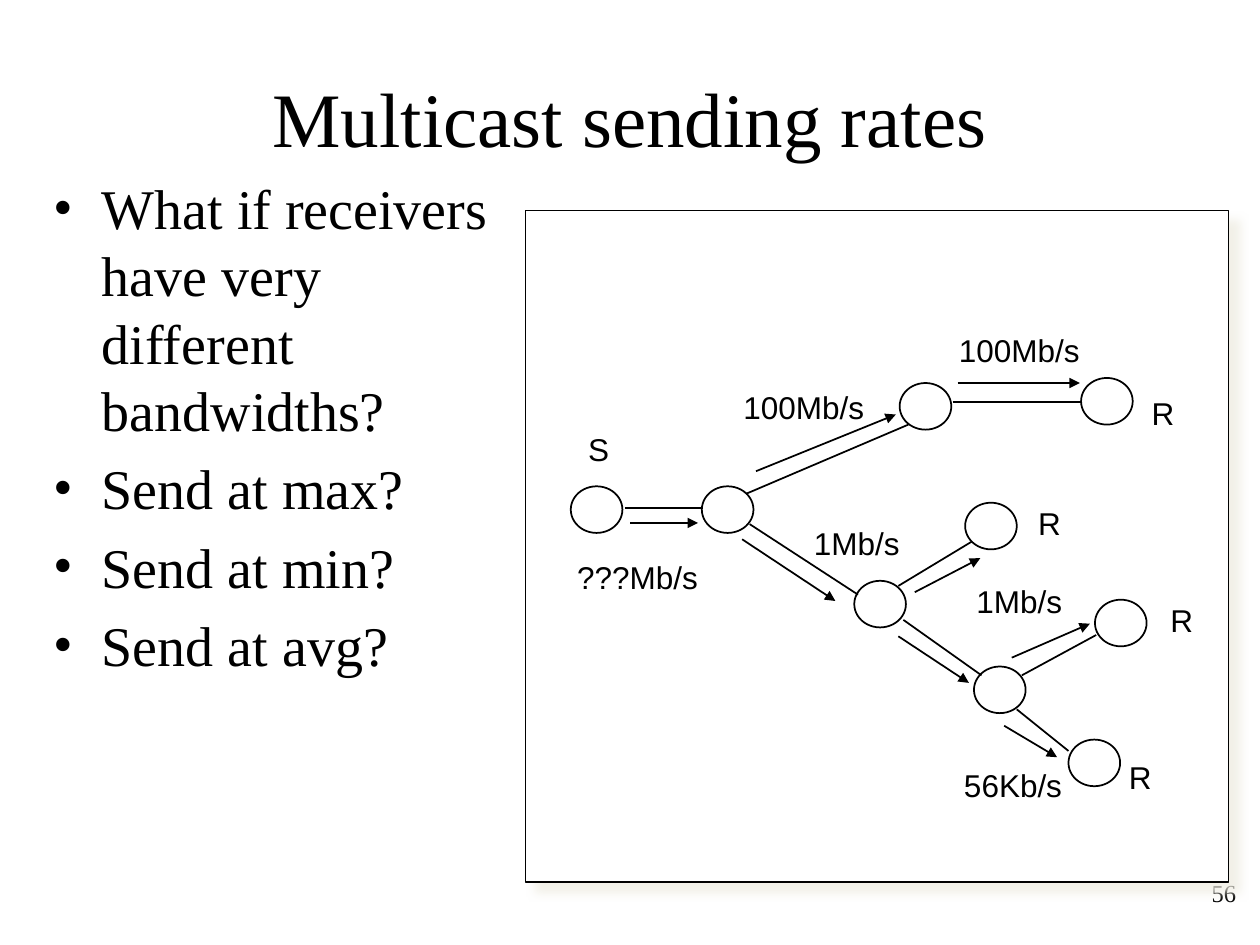
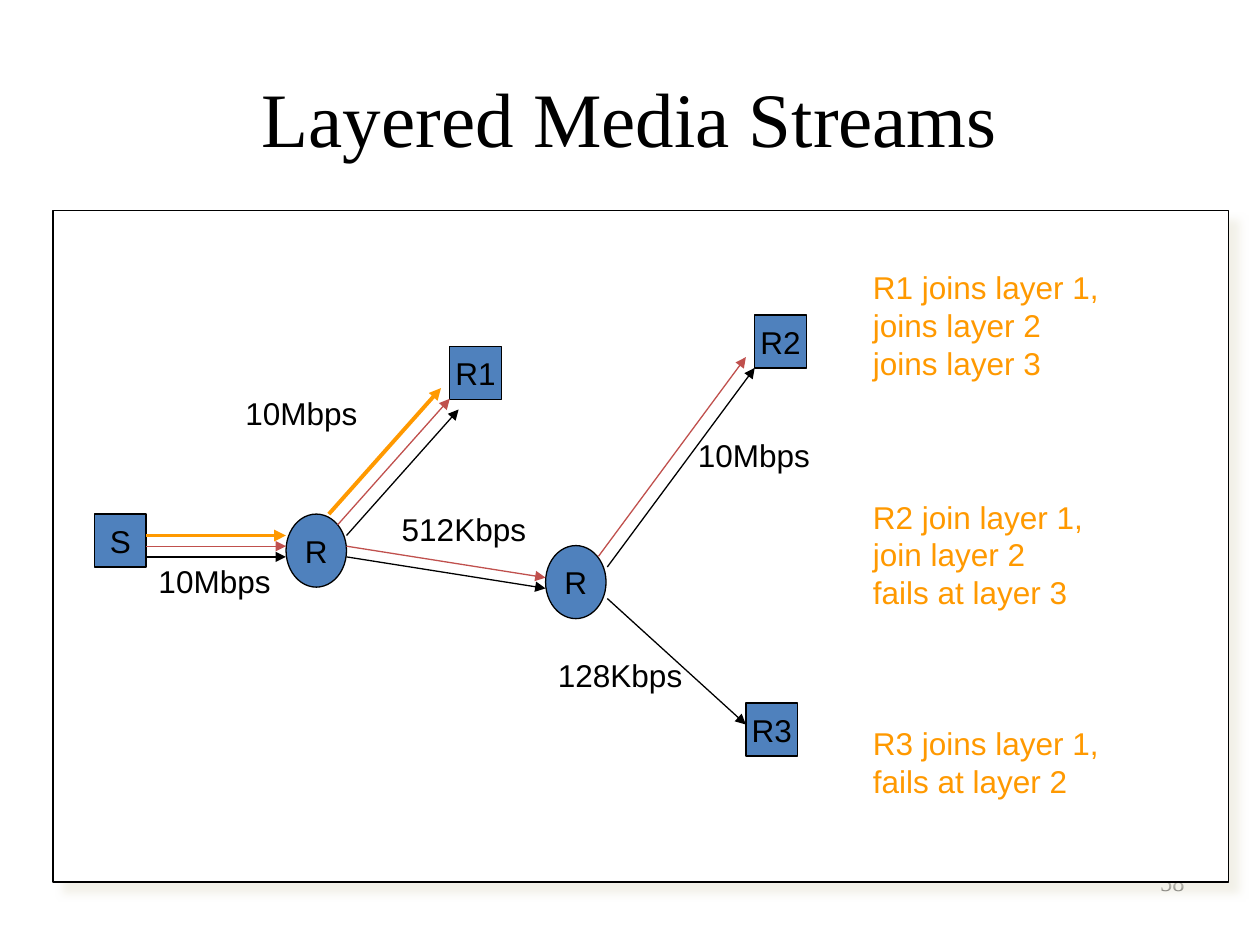
from lxml.etree import SubElement
from pptx import Presentation
from pptx.dml.color import RGBColor
from pptx.enum.shapes import MSO_CONNECTOR as Connector, MSO_SHAPE as Shape
from pptx.enum.text import MSO_ANCHOR as Anchor, PP_ALIGN as Align
from pptx.oxml.ns import qn
from pptx.util import Inches, Pt

BLACK = RGBColor(0x00, 0x00, 0x00)
WHITE = RGBColor(0xFF, 0xFF, 0xFF)
BLUE = RGBColor(0x4F, 0x81, 0xBD)
RED = RGBColor(0xC0, 0x50, 0x4D)
ORANGE = RGBColor(0xFF, 0x99, 0x00)
SHADOW = RGBColor(0xEE, 0xEC, 0xE1)
SERIF, SANS = "Times New Roman", "Arial"

ROUTER_SIZE = (0.41, 0.37)
HOST_SIZE = (0.41, 0.42)
HUB_SIZE = (0.48, 0.58)
LAYERS = [(BLACK, 0.75), (RED, 0.75), (ORANGE, 2.25)]


def style_text(shape, lines, size=18, font=SANS, color=BLACK,
               align=Align.LEFT, anchor=Anchor.TOP, wrap=False):
    frame = shape.text_frame
    frame.text = "\n".join(lines)
    frame.word_wrap = wrap
    frame.vertical_anchor = anchor
    for para in frame.paragraphs:
        para.alignment = align
        for span in para.runs:
            span.font.size = Pt(size)
            span.font.name = font
            span.font.color.rgb = color
    return frame


def add_text(page, at, lines, **style):
    box = page.shapes.add_textbox(*map(Inches, at))
    return style_text(box, lines, **style)


def add_shape(page, kind, at, fill=None, width=0.75):
    shape = page.shapes.add_shape(kind, *map(Inches, at))
    shape.shadow.inherit = False
    if fill is None:
        shape.fill.background()
    else:
        shape.fill.solid()
        shape.fill.fore_color.rgb = fill
    shape.line.color.rgb = BLACK
    shape.line.width = Pt(width)
    return shape


def add_line(page, start, end, color=BLACK, width=1, arrow=False):
    line = page.shapes.add_connector(
        Connector.STRAIGHT, *map(Inches, (*start, *end)))
    line.line.color.rgb = color
    line.line.width = Pt(width)
    properties = line._element.spPr
    if arrow:
        SubElement(properties.find(qn("a:ln")), qn("a:tailEnd"), type="triangle")
    SubElement(properties, qn("a:effectLst"))


def add_title(page, title):
    add_text(page, (0.5, 0.3, 9, 1.25), [title], size=44, font=SERIF,
             align=Align.CENTER, anchor=Anchor.MIDDLE, wrap=True)


def add_page_number(page, at, number):
    add_text(page, at, [number], size=14, font=SERIF,
             align=Align.RIGHT, wrap=True)


def add_panel(page, left):
    panel = add_shape(page, Shape.RECTANGLE, (left, 1.67, 9.75 - left, 5.33), WHITE)
    effects = panel._element.spPr.find(qn("a:effectLst"))
    shadow = SubElement(effects, qn("a:outerShdw"), blurRad=str(Pt(5)),
                        dist=str(Pt(8.5)), dir="2700000", algn="tl",
                        rotWithShape="0")
    color = SubElement(shadow, qn("a:srgbClr"), val=str(SHADOW))
    SubElement(color, qn("a:alpha"), val="75000")


def add_bullets(page, at, lines):
    frame = add_text(page, at, lines, size=32, font=SERIF, wrap=True)
    for para in frame.paragraphs:
        para.space_before = Pt(6.4)
        properties = para._p.get_or_add_pPr()
        properties.set("marL", str(Inches(0.38)))
        properties.set("indent", str(-Inches(0.38)))
        SubElement(properties, qn("a:buFont"), typeface=SERIF)
        SubElement(properties, qn("a:buChar"), char="•")


def add_rate(page, left, middle, width, label):
    add_text(page, (left, middle - 0.2, width, 0.4), [label],
             align=Align.CENTER, anchor=Anchor.MIDDLE)


def add_host(page, kind, size, left, top, label):
    host = add_shape(page, kind, (left, top, *size), BLUE)
    style_text(host, [label], align=Align.CENTER, anchor=Anchor.MIDDLE)


def add_stream(page, start, end, layer_count, shift=0):
    for index, (color, width) in enumerate(LAYERS[:layer_count]):
        offset_x, offset_y = index * shift, -index * 0.085
        add_line(page, (start[0] + offset_x, start[1] + offset_y),
                 (end[0] + offset_x, end[1] + offset_y), color, width, arrow=True)


def build_sending_rates(page):
    add_page_number(page, (7.83, 6.92, 2.08, 0.5), "56")
    add_panel(page, 4.17)
    add_title(page, "Multicast sending rates")
    add_bullets(page, (0.33, 1.33, 3.92, 5.33), [
        "What if receivers have very different bandwidths?",
        "Send at max?", "Send at min?", "Send at avg?"])

    routers = [(4.53, 3.86), (5.57, 3.86), (7.14, 3.04), (6.78, 4.61), (7.73, 5.29),
               (8.69, 4.76), (8.48, 5.87), (8.58, 3), (7.66, 3.99)]
    for corner in routers:
        add_shape(page, Shape.OVAL, (*corner, *ROUTER_SIZE), width=1)

    links = [((4.96, 4.03), (5.56, 4.03)), ((5.92, 3.92), (7.21, 3.37)),
             ((5.95, 4.16), (6.81, 4.72)), ((7.17, 4.92), (7.79, 5.36)),
             ((8.11, 5.36), (8.7, 5.04)), ((8.07, 5.63), (8.48, 5.96)),
             ((7.56, 3.19), (8.59, 3.19)), ((7.13, 4.65), (7.71, 4.3))]
    for start, end in links:
        add_line(page, start, end)

    flows = [((5, 4.15), (5.54, 4.15)), ((5.89, 4.28), (6.63, 4.77)),
             ((7.13, 5.05), (7.69, 5.42)), ((6, 3.74), (7.11, 3.29)),
             ((7.6, 3.04), (8.57, 3.04)), ((8.03, 5.22), (8.65, 4.95)),
             ((7.97, 5.76), (8.39, 6.01)), ((7.26, 4.7), (7.78, 4.43))]
    for start, end in flows:
        add_line(page, start, end, arrow=True)

    for left, middle, width, label in [
            (4.54, 3.56, 0.42, "S"), (8.83, 6.17, 0.44, "R"),
            (9.01, 3.28, 0.44, "R"), (9.16, 4.92, 0.44, "R"),
            (8.11, 4.15, 0.44, "R"), (4.48, 4.58, 1.16, "???Mb/s"),
            (5.8, 3.23, 1.16, "100Mb/s"), (7.51, 2.78, 1.16, "100Mb/s"),
            (6.36, 4.31, 0.88, "1Mb/s"), (7.65, 4.77, 0.88, "1Mb/s"),
            (7.55, 6.23, 0.98, "56Kb/s")]:
        add_rate(page, left, middle, width, label)


def build_layered_streams(page):
    add_page_number(page, (7.17, 6.83, 2.33, 0.52), "58")
    add_panel(page, 0.42)
    add_title(page, "Layered Media Streams")

    for left, top, label in [(0.75, 4.08, "S"), (3.57, 2.75, "R1"),
                             (5.99, 2.5, "R2"), (5.92, 5.58, "R3")]:
        add_host(page, Shape.RECTANGLE, HOST_SIZE, left, top, label)
    for left, top in [(2.27, 4.08), (4.33, 4.33)]:
        add_host(page, Shape.OVAL, HUB_SIZE, left, top, "R")

    add_stream(page, (1.16, 4.42), (2.27, 4.42), 3)
    add_stream(page, (2.75, 4.25), (3.64, 3.25), 3, shift=-0.07)
    add_stream(page, (2.75, 4.42), (4.33, 4.67), 2)
    add_stream(page, (4.82, 4.5), (5.99, 2.92), 2, shift=-0.07)
    add_stream(page, (4.82, 4.75), (5.92, 5.75), 1)

    for left, top, label in [(1.16, 4.41, "10Mbps"), (1.85, 3.08, "10Mbps"),
                             (3.09, 4, "512Kbps"), (4.33, 5.16, "128Kbps"),
                             (5.44, 3.41, "10Mbps")]:
        add_text(page, (left, top, 1.4, 0.5), [label])

    for top, height, lines in [
            (1.93, 1.3, ["R1 joins layer 1,", "joins layer 2", "joins layer 3"]),
            (3.75, 1.3, ["R2 join layer 1,", "join layer 2", "fails at layer 3"]),
            (5.6, 0.9, ["R3 joins layer 1,", "fails at layer 2"])]:
        add_text(page, (6.83, top, 2.6, height), lines, color=ORANGE,
                 anchor=Anchor.MIDDLE)


def main():
    deck = Presentation()
    deck.slide_width, deck.slide_height = Inches(10), Inches(7.5)
    blank = deck.slide_layouts[6]
    for build in (build_sending_rates, build_layered_streams):
        build(deck.slides.add_slide(blank))
    deck.save("out.pptx")


if __name__ == "__main__":
    main()
